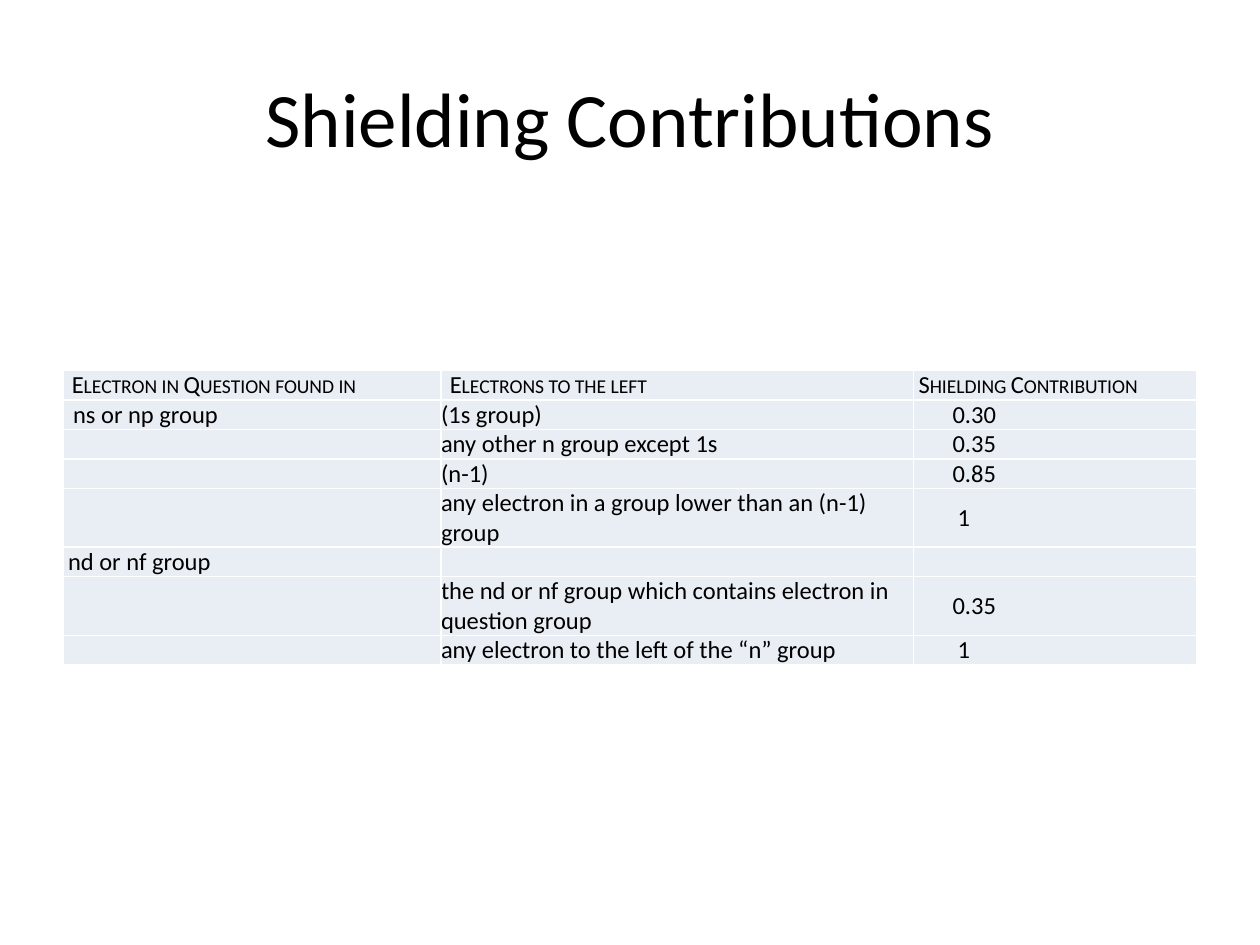
from typing import NamedTuple

from lxml.etree import SubElement
from pptx import Presentation
from pptx.dml.color import RGBColor
from pptx.enum.text import MSO_ANCHOR as Anchor, PP_ALIGN as Align
from pptx.oxml.ns import qn
from pptx.util import Inches, Pt

COLORS = {"text": "000000", "cell": "E9EDF4", "border": "FFFFFF"}
FONT = "Calibri"
BODY_SIZE = 14
COLUMN_WIDTHS = (3, 3.75, 2.25)
ROW_HEIGHT = 0.23
BORDER_TAGS = ("a:lnL", "a:lnR", "a:lnT", "a:lnB")


class Entry(NamedTuple):
    text: str = ""
    indent: float = 0
    small_caps: bool = False


def heading(text: str, indent: float) -> Entry:
    return Entry(text, indent, small_caps=True)


def decimal(text: str) -> Entry:
    return Entry(text, 0.31)


EMPTY = Entry()
WHOLE_SHIELD = Entry("1", 0.35)
CONTRIBUTIONS = (
    (heading("Electron in Question found in", 0.07),
     heading("Electrons to the left", 0.07),
     heading("Shielding Contribution", 0.04)),
    (Entry("ns or np group", 0.08), Entry("(1s group)"), decimal("0.30")),
    (EMPTY, Entry("any other n group except 1s"), decimal("0.35")),
    (EMPTY, Entry("(n-1)"), decimal("0.85")),
    (EMPTY, Entry("any electron in a group lower than an (n-1) group"), WHOLE_SHIELD),
    (Entry("nd or nf group", 0.04), EMPTY, EMPTY),
    (EMPTY, Entry("the nd or nf group which contains electron in question group"),
     decimal("0.35")),
    (EMPTY, Entry("any electron to the left of the “n” group"), WHOLE_SHIELD),
)


def rgb(role: str) -> RGBColor:
    return RGBColor.from_string(COLORS[role])


def apply_format(target, values: dict) -> None:
    for attribute, value in values.items():
        setattr(target, attribute, value)


def add_run(paragraph, text: str, size: float):
    run = paragraph.add_run()
    run.text = text
    apply_format(run.font, {"name": FONT, "size": Pt(size)})
    run.font.color.rgb = rgb("text")
    return run


def add_borders(cell) -> None:
    """Draw a one-point line on every side; call before filling the cell."""
    properties = cell._tc.get_or_add_tcPr()
    for tag in BORDER_TAGS:
        line = SubElement(properties, qn(tag), w=str(Pt(1)))
        fill = SubElement(line, qn("a:solidFill"))
        SubElement(fill, qn("a:srgbClr"), val=COLORS["border"])


def fill_cell(cell, entry: Entry) -> None:
    apply_format(cell, {
        "margin_left": Inches(entry.indent), "margin_right": 0,
        "margin_top": 0, "margin_bottom": 0,
        "vertical_anchor": Anchor.MIDDLE,
    })
    add_borders(cell)
    cell.fill.solid()
    cell.fill.fore_color.rgb = rgb("cell")
    paragraph = cell.text_frame.paragraphs[0]
    if not entry.text:
        # Keeps an empty cell from stretching its row
        SubElement(paragraph._p, qn("a:endParaRPr"), sz=str(BODY_SIZE * 100))
        return
    run = add_run(paragraph, entry.text, BODY_SIZE)
    if entry.small_caps:
        run.font._element.set("cap", "small")


def add_title(slide, text: str) -> None:
    title = slide.shapes.add_textbox(Inches(0.5), Inches(0.3), Inches(9), Inches(1.25))
    apply_format(title.text_frame, {"word_wrap": True, "vertical_anchor": Anchor.MIDDLE})
    paragraph = title.text_frame.paragraphs[0]
    paragraph.alignment = Align.CENTER
    add_run(paragraph, text, 44)


def add_contributions(slide) -> None:
    table = slide.shapes.add_table(
        len(CONTRIBUTIONS), len(COLUMN_WIDTHS), Inches(0.5), Inches(2.94),
        Inches(sum(COLUMN_WIDTHS)), Inches(ROW_HEIGHT * len(CONTRIBUTIONS))).table
    apply_format(table, {"first_row": False, "horz_banding": False})
    for column, width in zip(table.columns, COLUMN_WIDTHS):
        column.width = Inches(width)
    for row, entries in zip(table.rows, CONTRIBUTIONS):
        row.height = Inches(ROW_HEIGHT)
        for cell, entry in zip(row.cells, entries):
            fill_cell(cell, entry)


def main() -> None:
    deck = Presentation()
    apply_format(deck, {"slide_width": Inches(10), "slide_height": Inches(7.5)})
    slide = deck.slides.add_slide(deck.slide_layouts[6])
    add_title(slide, "Shielding Contributions")
    add_contributions(slide)
    deck.save("out.pptx")


if __name__ == "__main__":
    main()
